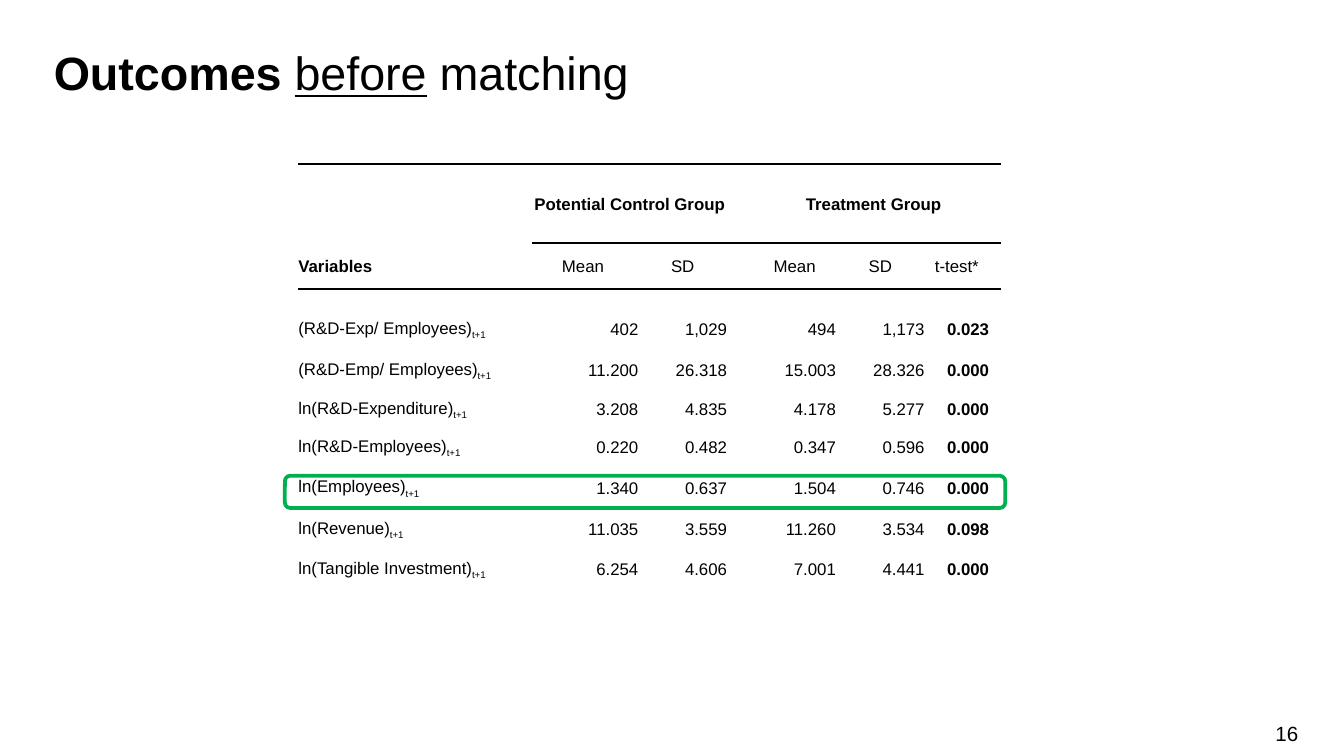
from lxml import etree
from pptx import Presentation
from pptx import util as u
from pptx.dml.color import RGBColor
from pptx.enum import shapes, text
from pptx.oxml import ns

COLORS = {"ink": "000000", "highlight": "00B050"}
FONT = "Arial"
NO_STYLE = "{2D5ABB26-0587-4C30-8999-92F81FD0307C}"
LEFT, CENTER, RIGHT = text.PP_ALIGN.LEFT, text.PP_ALIGN.CENTER, text.PP_ALIGN.RIGHT

COLUMN_WIDTHS = [1.74, 0.18, 0.61, 0.66, 0.23, 0.58, 0.66, 0.48, 0.09]
ROW_HEIGHTS = [0.59, 0.34, 0.15, 0.3, 0.31, 0.27, 0.3, 0.3, 0.32, 0.27]
FIRST_DATA_ROW = 3
VALUE_COLUMNS = [2, 3, 5, 6, 7]
TEST_COLUMN = 7
GROUPS = {1: "Potential Control Group ", 5: "Treatment Group"}
HEADINGS = {1: "Mean ", 3: "SD", 5: "Mean ", 6: "SD", 7: "t-test*"}
OUTCOMES = [
    ("(R&D-Exp/ Employees)", "402", "1,029", "494", "1,173", "0.023"),
    ("(R&D-Emp/ Employees)", "11.200", "26.318", "15.003", "28.326", "0.000"),
    ("ln(R&D-Expenditure)", "3.208", "4.835", "4.178", "5.277", "0.000"),
    ("ln(R&D-Employees)", "0.220", "0.482", "0.347", "0.596", "0.000"),
    ("ln(Employees)", "1.340", "0.637", "1.504", "0.746", "0.000"),
    ("ln(Revenue)", "11.035", "3.559", "11.260", "3.534", "0.098"),
    ("ln(Tangible Investment)", "6.254", "4.606", "7.001", "4.441", "0.000"),
]


def rgb(name):
    return RGBColor.from_string(COLORS[name])


def inches(*lengths):
    return [u.Inches(length) for length in lengths]


def apply(target, values):
    for name, value in values.items():
        setattr(target, name, value)


def add_span(para, words, size, **formats):
    span = para.add_run()
    span.text = words
    apply(span.font, {"name": FONT, "size": u.Pt(size), "bold": False, **formats})
    span.font.color.rgb = rgb("ink")
    return span


def add_title(slide):
    title = slide.shapes.title
    left, top, width, height = inches(0.4, 0.3, 9.31, 0.42)
    apply(title, {"left": left, "top": top, "width": width, "height": height})
    frame = title.text_frame
    apply(frame, {"margin_left": 0, "margin_right": 0, "margin_top": 0,
                  "margin_bottom": 0, "word_wrap": True,
                  "vertical_anchor": text.MSO_ANCHOR.TOP,
                  "auto_size": text.MSO_AUTO_SIZE.NONE})
    para = frame.paragraphs[0]
    apply(para, {"alignment": LEFT, "line_spacing": u.Pt(32), "space_before": u.Pt(0)})
    add_span(para, "Outcomes ", 25, bold=True)
    add_span(para, "before", 25, underline=True)
    add_span(para, " matching", 25)


def add_page_number(slide):
    frame = slide.shapes.add_textbox(*inches(8.99, 5.31, 0.67, 0.3)).text_frame
    apply(frame, {"margin_left": 0, "margin_right": 0, "word_wrap": True,
                  "vertical_anchor": text.MSO_ANCHOR.MIDDLE})
    para = frame.paragraphs[0]
    para.alignment = RIGHT
    add_span(para, "16", 11)


def add_border(cell, side, drawn):
    line = etree.SubElement(cell._tc.get_or_add_tcPr(), ns.qn(f"a:ln{side}"), w=str(u.Pt(1)))
    if drawn:
        fill = etree.SubElement(line, ns.qn("a:solidFill"))
        etree.SubElement(fill, ns.qn("a:srgbClr"), val=COLORS["ink"])
    else:
        etree.SubElement(line, ns.qn("a:noFill"))


def format_cell(cell, row, column):
    """Rule the header rows and keep empty cells from stretching their row."""
    drawn = {"L": False, "R": False,
             "T": row in (0, 2) or (row == 1 and column > 0),
             "B": row == 1 or (row == 0 and column > 0)}
    for side, is_drawn in drawn.items():
        add_border(cell, side, is_drawn)
    cell.fill.background()
    apply(cell, {"margin_left": 0, "margin_right": 0, "margin_top": 0,
                 "margin_bottom": 0, "vertical_anchor": text.MSO_ANCHOR.MIDDLE})
    para = cell.text_frame.paragraphs[0]
    if not para.runs:
        etree.SubElement(para._p, ns.qn("a:endParaRPr"), sz="400")


def write_cell(cell, words, alignment, bold=False):
    para = cell.text_frame.paragraphs[0]
    apply(para, {"alignment": alignment, "line_spacing": 1.07})
    add_span(para, words, 9, bold=bold)
    return para


def write_headers(table):
    for column, group in GROUPS.items():
        table.cell(0, column).merge(table.cell(0, column + 2))
        write_cell(table.cell(0, column), group, CENTER, bold=True)
    write_cell(table.cell(1, 0), "Variables", LEFT, bold=True)
    table.cell(1, 1).merge(table.cell(1, 2))
    for column, heading in HEADINGS.items():
        write_cell(table.cell(1, column), heading, CENTER)
    table.cell(2, 0).merge(table.cell(2, 2))


def write_outcomes(table):
    for row, (variable, *values) in enumerate(OUTCOMES, FIRST_DATA_ROW):
        table.cell(row, 0).merge(table.cell(row, 1))
        para = write_cell(table.cell(row, 0), variable, LEFT)
        period = add_span(para, "t+1", 9)
        period.font._element.set("baseline", "-25000")
        for column, value in zip(VALUE_COLUMNS, values):
            write_cell(table.cell(row, column), value, RIGHT, bold=column == TEST_COLUMN)


def add_outcome_table(slide):
    table = slide.shapes.add_table(len(ROW_HEIGHTS), len(COLUMN_WIDTHS),
                                   *inches(2.22, 1.22, 5.23, 3.15)).table
    apply(table, {"first_row": False, "horz_banding": False})
    table._tbl.tblPr.find(ns.qn("a:tableStyleId")).text = NO_STYLE
    for column, width in zip(table.columns, COLUMN_WIDTHS):
        column.width = u.Inches(width)
    for row, height in zip(table.rows, ROW_HEIGHTS):
        row.height = u.Inches(height)
    write_headers(table)
    write_outcomes(table)
    for row in range(len(ROW_HEIGHTS)):
        for column in range(len(COLUMN_WIDTHS)):
            format_cell(table.cell(row, column), row, column)


def add_highlight(slide):
    frame = slide.shapes.add_shape(shapes.MSO_SHAPE.ROUNDED_RECTANGLE,
                                   *inches(2.12, 3.54, 5.36, 0.24))
    frame.shadow.inherit = False
    frame.fill.background()
    frame.line.color.rgb = rgb("highlight")
    frame.line.width = u.Pt(2)


def main():
    deck = Presentation()
    deck.slide_width, deck.slide_height = inches(10, 10 * 9 / 16)
    slide = deck.slides.add_slide(deck.slide_layouts[5])
    add_title(slide)
    add_page_number(slide)
    add_outcome_table(slide)
    add_highlight(slide)
    deck.save("out.pptx")


if __name__ == "__main__":
    main()
